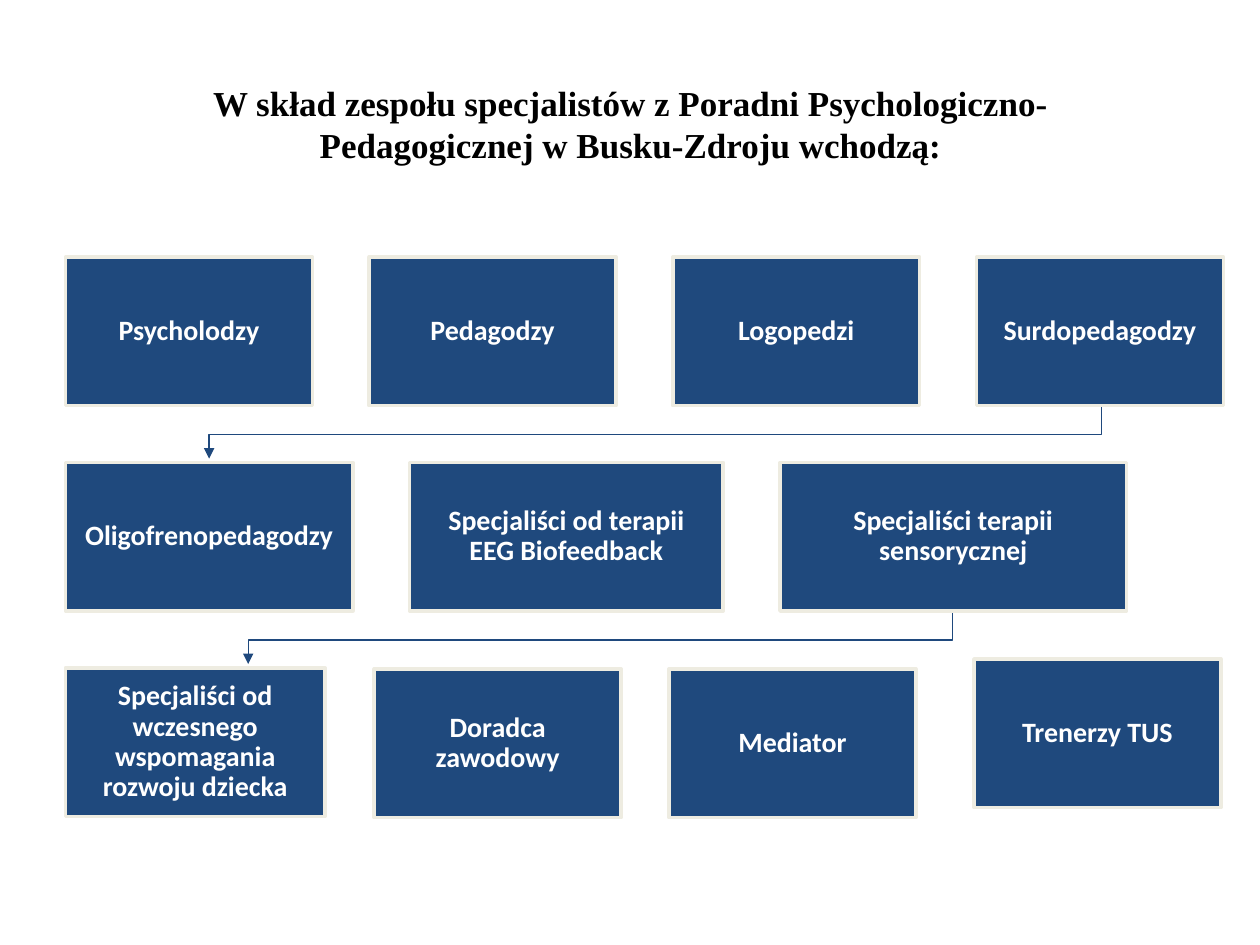
"""Build the slide listing the counselling centre's specialists."""
from lxml import etree
from pptx import Presentation
from pptx.dml.color import RGBColor
from pptx.enum import shapes, text
from pptx.oxml import ns
from pptx.util import Inches, Pt

TITLE = "W skład zespołu specjalistów z Poradni Psychologiczno-Pedagogicznej w Busku-Zdroju wchodzą:"
BLUE, CREAM, WHITE, BLACK = "1F497D", "EEECE1", "FFFFFF", "000000"
LEFT, GAP, WIDTH, HEIGHT = 0.52, 0.45, 1.96, 1.18
UPPER_ROWS = [
    (2.04, [("Psycholodzy", WIDTH), ("Pedagodzy", WIDTH),
            ("Logopedzi", WIDTH), ("Surdopedagodzy", WIDTH)]),
    (3.67, [("Oligofrenopedagodzy", 2.28),
            ("Specjaliści od terapii EEG Biofeedback", 2.49),
            ("Specjaliści terapii sensorycznej", 2.75)]),
]
BOTTOM_ROW = [
    ("Specjaliści od wczesnego wspomagania rozwoju dziecka", LEFT, 5.3, 2.06),
    ("Doradca zawodowy", 2.97, 5.31, WIDTH),
    ("Mediator", 5.31, 5.31, WIDTH),
    ("Trenerzy TUS", 7.73, 5.23, WIDTH),
]
ROW_LINKS = [(8.74, 1.66, 3.22), (7.56, 1.97, 4.85)]


def color(value):
    return RGBColor.from_string(value)


def write(frame, words, font_name, size, ink):
    frame.word_wrap = True
    paragraph = frame.paragraphs[0]
    paragraph.text = words
    paragraph.alignment = text.PP_ALIGN.CENTER
    font = paragraph.font
    font.name, font.size, font.bold = font_name, Pt(size), True
    font.color.rgb = color(ink)
    return paragraph


def add_specialist(slide, words, left, top, width):
    box = slide.shapes.add_shape(shapes.MSO_SHAPE.RECTANGLE, Inches(left), Inches(top),
                                 Inches(width), Inches(HEIGHT))
    box.shadow.inherit = False
    box.fill.solid()
    box.fill.fore_color.rgb = color(BLUE)
    box.line.color.rgb = color(CREAM)
    box.line.width = Pt(2)
    frame = box.text_frame
    frame.vertical_anchor = text.MSO_ANCHOR.MIDDLE
    frame.margin_left = frame.margin_right = Inches(0.12)
    frame.margin_top = frame.margin_bottom = Inches(0.12)
    paragraph = write(frame, words, "Calibri", 16, WHITE)
    paragraph.line_spacing = 0.9
    paragraph.space_after = Pt(5.6)


def add_row_link(slide, start, end, top):
    bend, bottom = top + 0.23, top + 0.42
    builder = slide.shapes.build_freeform(Inches(start), Inches(top))
    corners = [(start, bend), (end, bend), (end, bottom)]
    builder.add_line_segments([(Inches(x), Inches(y)) for x, y in corners], close=False)
    link = builder.convert_to_shape()
    link.shadow.inherit = False
    link.fill.background()
    link.line.color.rgb = color(BLUE)
    link.line.width = Pt(0.75)
    etree.SubElement(link.line._get_or_add_ln(), ns.qn("a:tailEnd"), type="triangle")


def main():
    deck = Presentation()
    deck.slide_width, deck.slide_height = Inches(10), Inches(7.5)
    slide = deck.slides.add_slide(deck.slide_layouts[6])
    title = slide.shapes.add_textbox(Inches(0.91), Inches(0.6), Inches(8.19), Inches(0.77))
    write(title.text_frame, TITLE, "Times New Roman", 20, BLACK)
    for link in ROW_LINKS:
        add_row_link(slide, *link)
    for top, specialists in UPPER_ROWS:
        left = LEFT
        for words, width in specialists:
            add_specialist(slide, words, left, top, width)
            left += width + GAP
    for specialist in BOTTOM_ROW:
        add_specialist(slide, *specialist)
    deck.save("out.pptx")


if __name__ == "__main__":
    main()
